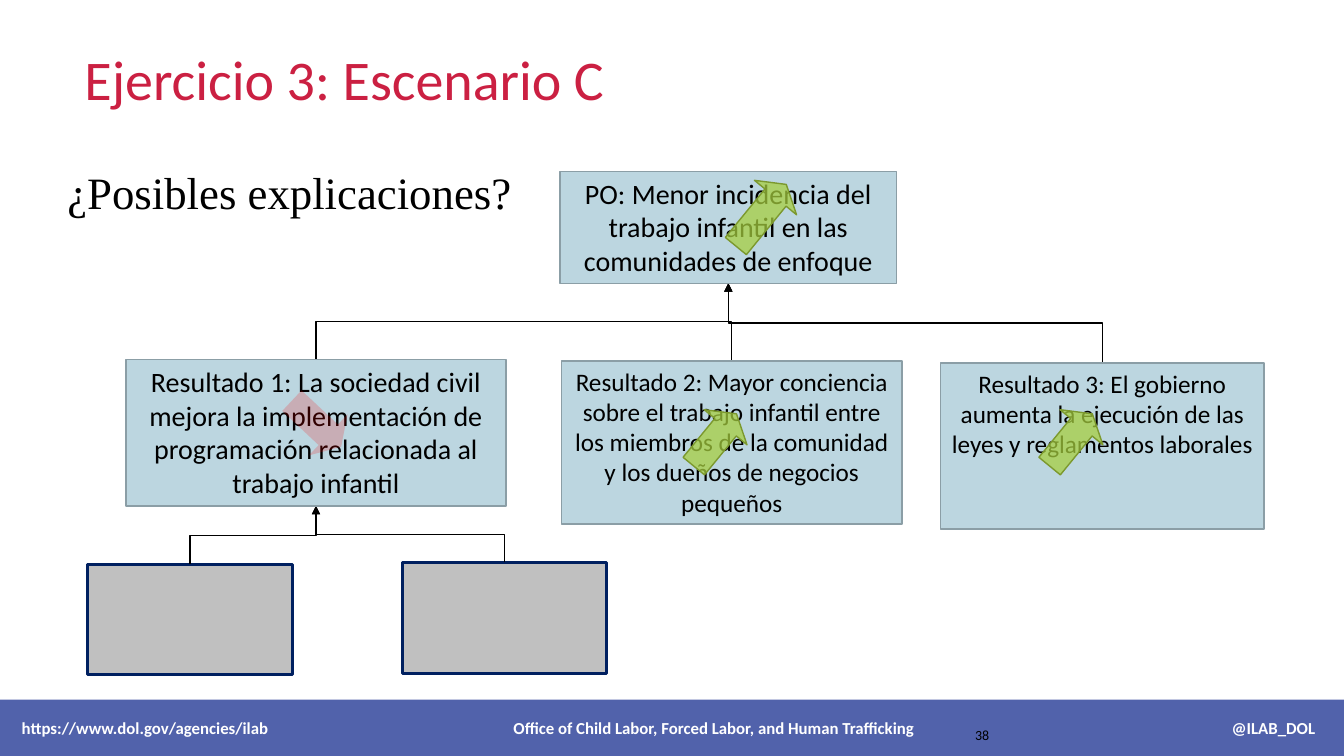
from collections import namedtuple

from lxml.etree import SubElement
from pptx import Presentation
from pptx.dml.color import RGBColor
from pptx.enum.shapes import MSO_CONNECTOR as Connector, MSO_SHAPE as Preset
from pptx.enum.text import MSO_ANCHOR as Anchor, PP_ALIGN as Align
from pptx.oxml.ns import qn
from pptx.util import Pt

CRIMSON = RGBColor(0xCB, 0x20, 0x42)
BLACK = RGBColor(0, 0, 0)
WHITE = RGBColor(0xFF, 0xFF, 0xFF)
PALE_BLUE = RGBColor(0xBC, 0xD6, 0xE0)
SLATE = RGBColor(0x8B, 0x9E, 0xA6)
GRAY = RGBColor(0xC0, 0xC0, 0xC0)
NAVY = RGBColor(0x00, 0x20, 0x60)
GREEN = RGBColor(0xA7, 0xCF, 0x3E)
DARK_GREEN = RGBColor(0x7C, 0x99, 0x2E)
RED = RGBColor(0xFF, 0, 0)
INDIGO = RGBColor(0x3F, 0x51, 0xA2)

Box = namedtuple("Box", "left top width height")
RISING, FALLING = 39.3, 133.2


def in_points(box):
    return [Pt(length) for length in box]


def write(shape, text, size, color, font="Calibri", align=Align.LEFT, anchor=Anchor.TOP, bold=False):
    frame = shape.text_frame
    frame.word_wrap = True
    frame.vertical_anchor = anchor
    paragraph = frame.paragraphs[0]
    paragraph.text = text
    paragraph.alignment = align
    paragraph.font.name = font
    paragraph.font.size = Pt(size)
    paragraph.font.bold = bold
    paragraph.font.color.rgb = color
    return paragraph


def add_label(slide, box, text, size, color, **style):
    write(slide.shapes.add_textbox(*in_points(box)), text, size, color, **style)


def add_filled(slide, box, preset, fill, line=None, weight=1, opacity=100):
    shape = slide.shapes.add_shape(preset, *in_points(box))
    shape.shadow.inherit = False
    shape.fill.solid()
    shape.fill.fore_color.rgb = fill
    if opacity < 100:
        color = shape.fill._xPr.find(qn("a:solidFill"))[0]
        SubElement(color, qn("a:alpha")).set("val", str(opacity * 1000))
    if line is None:
        shape.line.fill.background()
    else:
        shape.line.color.rgb = line
        shape.line.width = Pt(weight)
    return shape


def add_trend(slide, box, rotation):
    if rotation == RISING:
        arrow = add_filled(slide, box, Preset.UP_ARROW, GREEN, DARK_GREEN, opacity=73)
    else:
        arrow = add_filled(slide, box, Preset.UP_ARROW, RED, opacity=19)
    arrow.adjustments[1] = 0.312
    arrow.rotation = rotation


def add_result(slide, box, text, size, trend, rotation=RISING):
    shape = add_filled(slide, box, Preset.RECTANGLE, PALE_BLUE, SLATE)
    write(shape, text, size, BLACK, align=Align.CENTER)
    trend_box = Box(box.left + trend.left, box.top + trend.top, trend.width, trend.height)
    add_trend(slide, trend_box, rotation)


def link_up(slide, child, parent):
    start_x, start_y = child.left + child.width / 2, child.top
    end_x, end_y = parent.left + parent.width / 2, parent.top + parent.height
    center_x, center_y = (start_x + end_x) / 2, (start_y + end_y) / 2
    half_rise, half_run = (start_y - end_y) / 2, (end_x - start_x) / 2
    connector = slide.shapes.add_connector(
        Connector.ELBOW,
        Pt(center_x - half_rise), Pt(center_y - half_run),
        Pt(center_x + half_rise), Pt(center_y + half_run))
    connector.line.color.rgb = BLACK
    connector.line.width = Pt(1)
    properties = connector._element.spPr
    properties.find(qn("a:xfrm")).set("rot", str(270 * 60000))
    SubElement(properties.find(qn("a:ln")), qn("a:tailEnd")).set("type", "triangle")
    SubElement(properties, qn("a:effectLst"))


def add_results_tree(slide, box):
    def within(left, top, width, height):
        return Box(box.left + left, box.top + top, width, height)

    goal = within(337.4, 0, 240.5, 80)
    civil_society = within(27.4, 134.6, 271.4, 104.4)
    awareness = within(338.4, 135.4, 243.4, 116.6)
    government = within(609.2, 136.8, 231.1, 118.8)
    outputs = [within(0, 280.8, 146.2, 78.5), within(224.7, 279.4, 146.2, 79.2)]

    for output in outputs:
        add_filled(slide, output, Preset.RECTANGLE, GRAY, NAVY, 2.25)
        link_up(slide, output, civil_society)
    for result in (civil_society, awareness, government):
        link_up(slide, result, goal)

    add_result(slide, civil_society,
               "Resultado 1: La sociedad civil mejora la implementación de "
               "programación relacionada al trabajo infantil",
               20, Box(115.9, 21.6, 40.3, 48.2), FALLING)
    add_result(slide, awareness,
               "Resultado 2: Mayor conciencia sobre el trabajo infantil entre los "
               "miembros de la comunidad y los dueños de negocios pequeños",
               18, Box(90, 32.4, 39.6, 48.2))
    add_result(slide, government,
               "Resultado 3: El gobierno aumenta la ejecución de las leyes y "
               "reglamentos laborales",
               18, Box(73.4, 31, 39.6, 48.2))
    add_result(slide, goal,
               "PO: Menor incidencia del trabajo infantil en las comunidades de enfoque",
               20, Box(124.2, 2.9, 38.9, 56.9))


def add_footer(slide, box):
    bar = add_filled(slide, box, Preset.RECTANGLE, INDIGO, opacity=90)
    margin = 15.5
    bar.text_frame.margin_left = Pt(margin)
    entries = ["https://www.dol.gov/agencies/ilab",
               "Office of Child Labor, Forced Labor, and Human Trafficking",
               "@ILAB_DOL"]
    paragraph = write(bar, "\t".join(entries), 12, WHITE, anchor=Anchor.MIDDLE, bold=True)
    properties = paragraph._p.get_or_add_pPr()
    tabs = properties.makeelement(qn("a:tabLst"), {})
    for position, kind in ((510, "ctr"), (939.5, "r")):
        tab = SubElement(tabs, qn("a:tab"))
        tab.set("pos", str(Pt(position - margin)))
        tab.set("algn", kind)
    properties.find(qn("a:defRPr")).addprevious(tabs)
    add_label(slide, Box(box.left + 671.8, box.top + 15.8, 41.8, 18), "38", 10, BLACK,
              align=Align.RIGHT)


def main():
    presentation = Presentation()
    presentation.slide_width, presentation.slide_height = Pt(960), Pt(540)
    slide = presentation.slides.add_slide(presentation.slide_layouts[6])
    add_label(slide, Box(53.3, 28.8, 751, 54), "Ejercicio 3: Escenario C", 40, CRIMSON,
              anchor=Anchor.MIDDLE)
    add_label(slide, Box(41, 113.8, 395.3, 46), "¿Posibles explicaciones?", 32, BLACK,
              font="Times New Roman")
    add_results_tree(slide, Box(62.6, 122.4, 840.3, 359.3))
    add_footer(slide, Box(0, 499.7, 960, 40.3))
    presentation.save("out.pptx")


if __name__ == "__main__":
    main()
